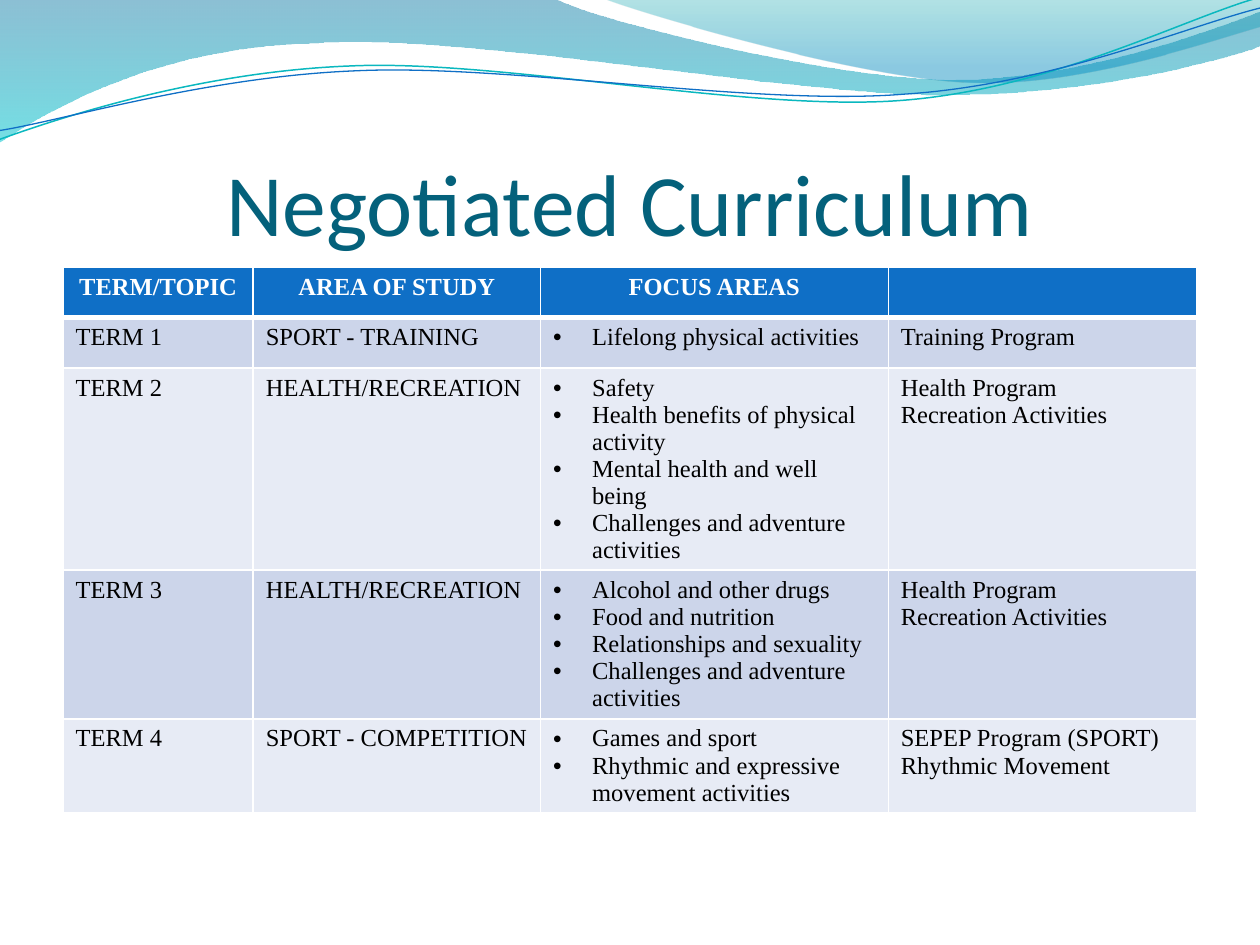
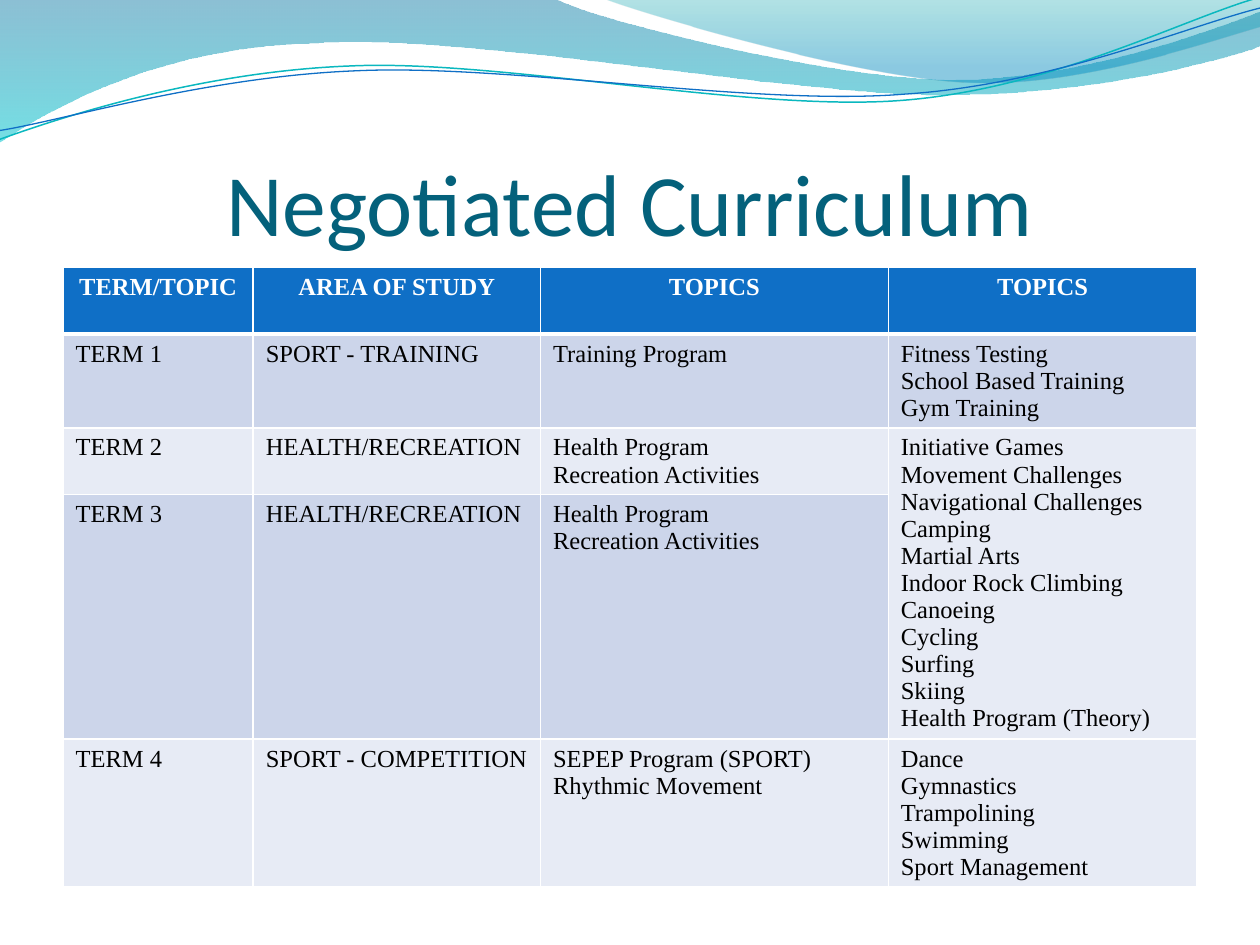
from lxml.etree import SubElement
from pptx import Presentation
from pptx.dml.color import RGBColor
from pptx.enum.text import MSO_ANCHOR as Anchor, MSO_AUTO_SIZE as AutoSize, PP_ALIGN as Align
from pptx.oxml.ns import qn
from pptx.util import Inches, Pt

WHITE, BLACK, BLUE, TITLE_TEAL = "FFFFFF", "000000", "0F6FC6", "04617B"
ROW_FILLS = ["E7EBF5", "CCD5EA"]
TABLE_FONT, TITLE_FONT = "Times New Roman", "Calibri"
MARGIN, CONTENT_WIDTH = 0.5, 9
COLUMN_WIDTHS = [1.51, 2.28, 2.76, 2.45]
BULLET_INDENT = Inches(0.31)
LINE_TILT = 357.3

# Each wave: outline, then gradient stops (position, colour, opacity %) or line (colour, width).
# An outline point is a corner (x, y) or a curve (control 1, control 2, end).
FILLED_WAVES = [
    ([(0, 0), (4.4, -0.01), (4.76, 0.17, 6.64, 0.63, 7.58, 0.63),
      (8.53, 0.63, 9.58, 0.26, 10, 0.09), (10.01, 0.36),
      (9.83, 0.44, 8.7, 0.76, 7.46, 0.75), (6.22, 0.75, 3.82, 0.28, 2.57, 0.34),
      (1.29, 0.36, 0.46, 0.83, -0.01, 1.13), (0, 0)],
     [(0, "0074A1", 45), (1, "00C6CF", 55)]),
    ([(4.79, -0.01), (5.09, 0.11, 6.82, 0.62, 7.69, 0.65),
      (8.56, 0.69, 9.61, 0.32, 10, 0.21), (10, 0), (4.79, -0.01)],
     [(0, "00A1A9", 30), (0.8, "008BBF", 45)]),
]
LINE_WAVES = [
    ([(-0.02, 0.87), (0.47, 0.72, 1.58, 0.41, 2.78, 0.42),
      (3.96, 0.42, 5.91, 0.93, 7.12, 0.9), (8.32, 0.87, 9.4, 0.36, 10, 0.22)],
     ("0AB8BF", 0.85)),
    ([(-0.02, 0.8), (0.46, 0.75, 1.64, 0.45, 2.83, 0.46),
      (4.03, 0.46, 5.96, 0.89, 7.16, 0.85), (8.35, 0.83, 9.42, 0.42, 10.02, 0.3)],
     (BLUE, 0.75)),
]

TERMS = ["TERM 1", "TERM 2", "TERM 3", "TERM 4"]
AREAS = ["SPORT - TRAINING", "HEALTH/RECREATION", "HEALTH/RECREATION", "SPORT - COMPETITION"]
HEALTH = ["Health Program", "Recreation Activities"]
PROGRAMS = [["Training Program"], HEALTH, HEALTH, ["SEPEP Program (SPORT)", "Rhythmic Movement"]]
FOCUS_AREAS = [
    ["Lifelong physical activities"],
    ["Safety", "Health benefits of physical activity", "Mental health and well being",
     "Challenges and adventure activities"],
    ["Alcohol and other drugs", "Food and nutrition", "Relationships and sexuality",
     "Challenges and adventure activities"],
    ["Games and sport", "Rhythmic and expressive movement activities"],
]
ACTIVITIES = [
    ["Fitness Testing", "School Based Training", "Gym Training"],
    ["Initiative Games", "Movement Challenges", "Navigational Challenges", "Camping",
     "Martial Arts", "Indoor Rock Climbing", "Canoeing", "Cycling", "Surfing", "Skiing",
     "Health Program (Theory)"],
    [],
    ["Dance", "Gymnastics", "Trampolining", "Swimming", "Sport Management"],
]
# Headings of the last two columns, their contents, row heights, bulleted column, merged rows
TABLES = [
    (["FOCUS AREAS", ""], FOCUS_AREAS, PROGRAMS, [0.4, 0.4, 1.6, 1.18, 0.74], 2, None),
    (["TOPICS", "TOPICS"], PROGRAMS, ACTIVITIES, [0.53, 0.74, 0.53, 1.94, 1.17], None, (2, 3)),
]


def color(hex_text):
    return RGBColor.from_string(hex_text)


def draw_wave(shapes, outline, closed):
    """Draw an outline given in inches; parts with control points become Bézier curves."""
    ends = [(Inches(part[-2]), Inches(part[-1])) for part in outline]
    builder = shapes.build_freeform(*ends[0])
    builder.add_line_segments(ends[1:], close=closed)
    wave = builder.convert_to_shape()
    wave.shadow.inherit = False
    segments = list(wave.element.iter(qn("a:lnTo")))
    for segment, part in zip(segments, outline[1:]):
        if len(part) == 2:
            continue
        curve = segment.makeelement(qn("a:cubicBezTo"))
        for x, y in [part[:2], part[2:4]]:
            SubElement(curve, qn("a:pt"), x=str(Inches(x) - wave.left), y=str(Inches(y) - wave.top))
        curve.append(segment[0])
        segment.getparent().replace(segment, curve)
    return wave


deck = Presentation()
deck.slide_width, deck.slide_height = Inches(10), Inches(7.5)
layout = deck.slide_layouts[5]
pages = [deck.slides.add_slide(layout) for table_data in TABLES]

# Waves are drawn on a page, then moved to the layout that all pages share
waves = []
for outline, stops in FILLED_WAVES:
    wave = draw_wave(pages[0].shapes, outline, True)
    wave.line.fill.background()
    wave.fill.gradient()
    wave.fill.gradient_angle = 270
    for stop, (position, hex_text, opacity) in zip(wave.fill.gradient_stops, stops):
        stop.position = position
        stop.color.rgb = color(hex_text)
    stop_colors = wave.element.spPr.findall(".//" + qn("a:gs") + "/" + qn("a:srgbClr"))
    for stop_color, (position, hex_text, opacity) in zip(stop_colors, stops):
        SubElement(stop_color, qn("a:alpha"), val=str(opacity * 1000))
    waves.append(wave)
for outline, (hex_text, width) in LINE_WAVES:
    wave = draw_wave(pages[0].shapes, outline, False)
    wave.rotation = LINE_TILT
    wave.fill.background()
    wave.line.color.rgb = color(hex_text)
    wave.line.width = Pt(width)
    waves.append(wave)
for number, wave in enumerate(waves):
    wave.element.nvSpPr.cNvPr.set("id", str(100 + number))
    wave.name = f"Wave {number + 1}"
    layout.shapes.element.insert(2 + number, wave.element)

for page, (headings, third, fourth, heights, bulleted, merged) in zip(pages, TABLES):
    title = page.shapes.title
    title.left, title.top = Inches(MARGIN), Inches(0.77)
    title.width, title.height = Inches(CONTENT_WIDTH), Inches(1.25)
    title.text = "Negotiated Curriculum"
    frame = title.text_frame
    frame.auto_size = AutoSize.NONE
    frame.vertical_anchor = Anchor.BOTTOM
    frame.margin_left = frame.margin_right = frame.margin_bottom = 0
    frame.margin_top = Inches(0.05)
    para = frame.paragraphs[0]
    para.alignment = Align.CENTER
    para.font.name, para.font.size = TITLE_FONT, Pt(50)
    para.font.color.rgb = color(TITLE_TEAL)

    rows = [[[heading] for heading in ["TERM/TOPIC", "AREA OF STUDY"] + headings]]
    rows += [[[term], [area], left, right]
             for term, area, left, right in zip(TERMS, AREAS, third, fourth)]
    table = page.shapes.add_table(len(rows), len(COLUMN_WIDTHS), Inches(MARGIN), Inches(2.12),
                                  Inches(CONTENT_WIDTH), Inches(sum(heights))).table
    for column, width in zip(table.columns, COLUMN_WIDTHS):
        column.width = Inches(width)
    for row, height in zip(table.rows, heights):
        row.height = Inches(height)
    if merged:
        table.cell(merged[0], 3).merge(table.cell(merged[1], 3))

    for row_number, row in enumerate(rows):
        is_header = row_number == 0
        for column_number, lines in enumerate(row):
            cell = table.cell(row_number, column_number)
            for side in ["lnL", "lnR", "lnT", "lnB"]:
                thick = (is_header and side == "lnB") or (row_number == 1 and side == "lnT")
                border = SubElement(cell._tc.get_or_add_tcPr(), qn("a:" + side),
                                    w=str(Pt(3 if thick else 1)))
                SubElement(SubElement(border, qn("a:solidFill")), qn("a:srgbClr"), val=WHITE)
            cell.fill.solid()
            cell.fill.fore_color.rgb = color(BLUE if is_header else ROW_FILLS[row_number % 2])
            cell.text = "\n".join(lines)
            for para in cell.text_frame.paragraphs:
                para.alignment = Align.CENTER if is_header else Align.LEFT
                if column_number == bulleted and not is_header:
                    properties = para._p.get_or_add_pPr()
                    properties.set("marL", str(BULLET_INDENT))
                    properties.set("indent", str(-BULLET_INDENT))
                    SubElement(properties, qn("a:buFont"), typeface="Arial")
                    SubElement(properties, qn("a:buChar"), char="•")
                para.font.name, para.font.size = TABLE_FONT, Pt(14)
                para.font.bold = is_header
                para.font.color.rgb = color(WHITE if is_header else BLACK)

deck.save("out.pptx")
